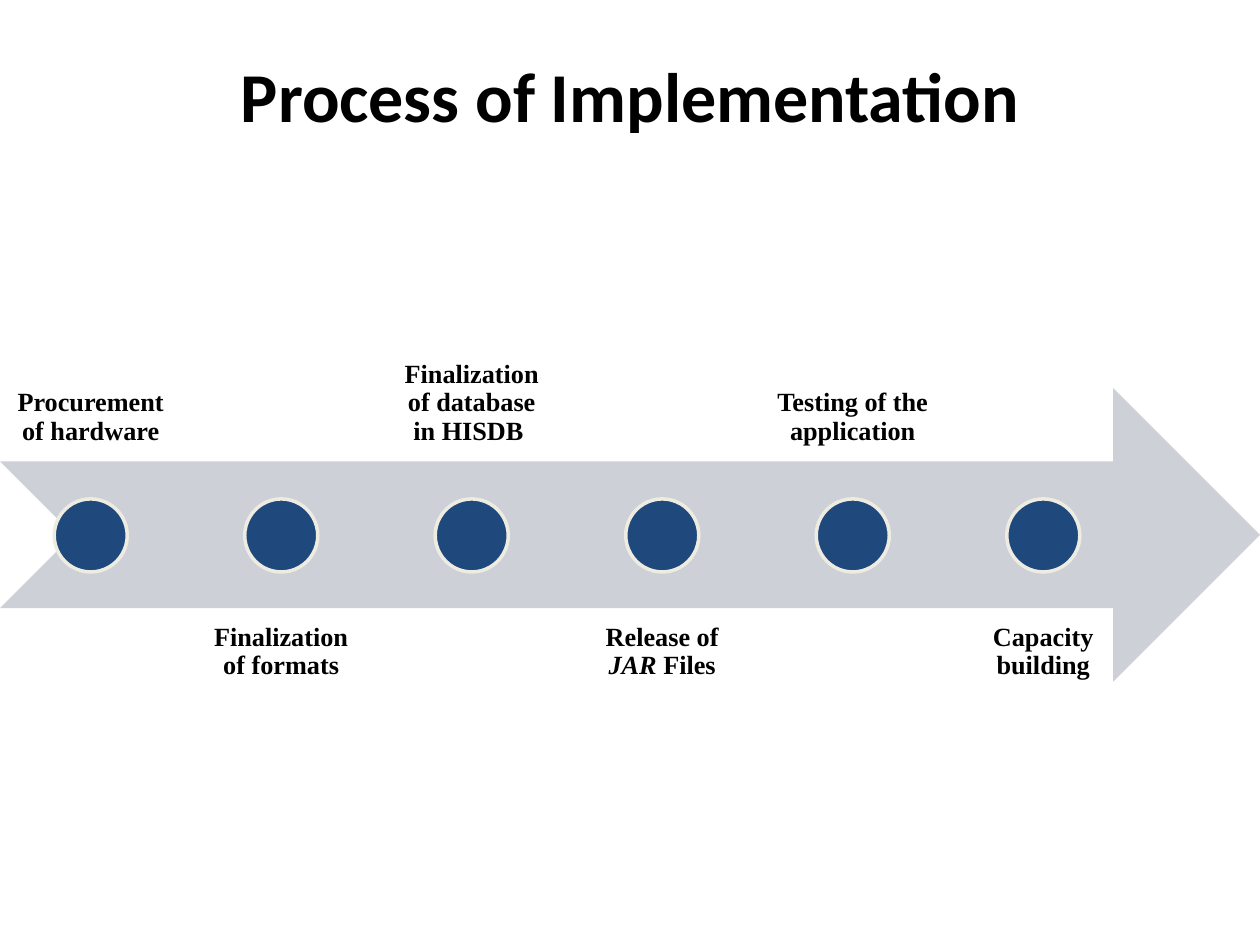
"""Build the implementation process timeline slide."""
from dataclasses import dataclass

from pptx import Presentation
from pptx.dml.color import RGBColor
from pptx.enum.shapes import MSO_SHAPE
from pptx.enum.text import MSO_ANCHOR, PP_ALIGN
from pptx.shapes.autoshape import Shape
from pptx.shapes.group import GroupShape
from pptx.text.text import TextFrame
from pptx.util import Inches, Pt

BLACK = RGBColor(0x00, 0x00, 0x00)
ARROW_GRAY = RGBColor(0xCD, 0xD0, 0xD7)
MARKER_BLUE = RGBColor(0x1F, 0x49, 0x7D)
MARKER_RIM = RGBColor(0xEE, 0xEC, 0xE1)

LABEL_WIDTH = 1.44
LABEL_HEIGHT = 2.33
LABEL_INSET = 0.12
ABOVE_TOP = 1.33
BELOW_TOP = 4.83
STEP_PITCH = 1.512
MARKER_SIZE = 0.58
MARKER_TOP = 3.96

TITLE_FONT = {"name": "Calibri", "size": Pt(40), "bold": True}
LABEL_FONT = {"name": "Times New Roman", "size": Pt(15), "bold": True}
LABEL_FRAME = {
    "word_wrap": True,
    **{f"margin_{side}": Inches(LABEL_INSET) for side in ("left", "top", "right", "bottom")},
}


@dataclass(frozen=True)
class Piece:
    text: str
    italic: bool = False


@dataclass(frozen=True)
class Step:
    pieces: tuple[Piece, ...]


STEPS = (
    Step((Piece("Procurement of hardware"),)),
    Step((Piece("Finalization of formats"),)),
    Step((Piece("Finalization of database in HISDB "),)),
    Step((Piece("Release of "), Piece("JAR", italic=True), Piece(" Files"))),
    Step((Piece("Testing of the application"),)),
    Step((Piece("Capacity building"),)),
)


def apply_format(target: object, values: dict) -> None:
    """Set each named attribute on the target."""
    for name, value in values.items():
        setattr(target, name, value)


def write_centered(frame: TextFrame, pieces: tuple[Piece, ...], font_format: dict) -> None:
    """Write the pieces as one centered black paragraph."""
    paragraph = frame.paragraphs[0]
    paragraph.alignment = PP_ALIGN.CENTER
    for piece in pieces:
        run = paragraph.add_run()
        run.text = piece.text
        apply_format(run.font, {**font_format, "italic": piece.italic})
        run.font.color.rgb = BLACK


def add_filled_shape(
    group: GroupShape, kind: MSO_SHAPE, left: float, top: float,
    width: float, height: float, color: RGBColor,
) -> Shape:
    """Add a flat shape without an outline."""
    shape = group.shapes.add_shape(kind, Inches(left), Inches(top), Inches(width), Inches(height))
    shape.shadow.inherit = False
    shape.fill.solid()
    shape.fill.fore_color.rgb = color
    shape.line.fill.background()
    return shape


def add_step(group: GroupShape, index: int, step: Step) -> None:
    """Add a label, alternating above and below the arrow, and its marker."""
    left = index * STEP_PITCH
    is_above = index % 2 == 0
    label = group.shapes.add_textbox(
        Inches(left), Inches(ABOVE_TOP if is_above else BELOW_TOP),
        Inches(LABEL_WIDTH), Inches(LABEL_HEIGHT),
    )
    frame = label.text_frame
    apply_format(frame, LABEL_FRAME)
    frame.vertical_anchor = MSO_ANCHOR.BOTTOM if is_above else MSO_ANCHOR.TOP
    write_centered(frame, step.pieces, LABEL_FONT)
    frame.paragraphs[0].line_spacing = 0.9

    marker_left = left + (LABEL_WIDTH - MARKER_SIZE) / 2
    marker = add_filled_shape(
        group, MSO_SHAPE.OVAL, marker_left, MARKER_TOP, MARKER_SIZE, MARKER_SIZE, MARKER_BLUE
    )
    marker.line.color.rgb = MARKER_RIM
    marker.line.width = Pt(2)


def main() -> None:
    """Create and save the presentation."""
    presentation = Presentation()
    presentation.slide_width = Inches(10)
    presentation.slide_height = Inches(7.5)
    slide = presentation.slides.add_slide(presentation.slide_layouts[5])

    title = slide.shapes.title
    apply_format(title, {
        "left": Inches(0.5), "top": Inches(0), "width": Inches(9), "height": Inches(1.5),
    })
    title.text_frame.vertical_anchor = MSO_ANCHOR.MIDDLE
    write_centered(title.text_frame, (Piece("Process of Implementation"),), TITLE_FONT)

    timeline = slide.shapes.add_group_shape()
    add_filled_shape(timeline, MSO_SHAPE.NOTCHED_RIGHT_ARROW, 0, 3.08, 10, 2.33, ARROW_GRAY)
    for index, step in enumerate(STEPS):
        add_step(timeline, index, step)

    presentation.save("out.pptx")


if __name__ == "__main__":
    main()
